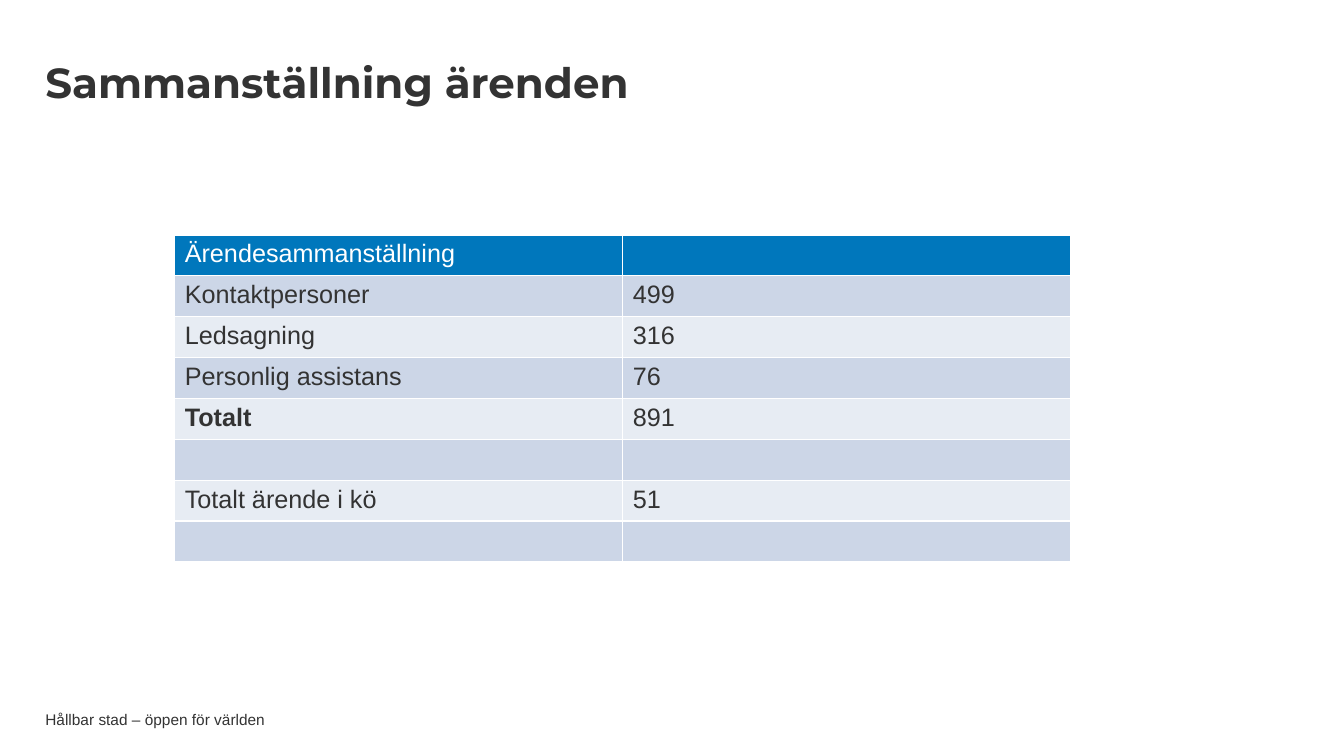
from dataclasses import dataclass

from pptx import Presentation
from pptx.dml.color import RGBColor as Rgb
from pptx.enum.text import MSO_ANCHOR as Anchor, MSO_AUTO_SIZE as AutoSize, PP_ALIGN as Align
from pptx.util import Pt


@dataclass(frozen=True)
class Theme:
    """Colours, fonts and type sizes of the slide."""
    ink: str = "333333"
    white: str = "FFFFFF"
    header: str = "0077BC"
    bands: tuple = ("CCD6E7", "E7ECF3")
    title_font: str = "Montserrat"
    body_font: str = "Arial"
    title_size: int = 30
    table_size: int = 18
    footer_size: int = 11


THEME = Theme()
CASES = [
    ("Ärendesammanställning", ""),
    ("Kontaktpersoner", "499"),
    ("Ledsagning", "316"),
    ("Personlig assistans", "76"),
    ("Totalt", "891"),
    ("", ""),
    ("Totalt ärende i kö", "51"),
    ("", ""),
]


def add_span(para, text, font, size, color, bold=False):
    """Add one formatted run to a paragraph."""
    span = para.add_run()
    span.text = text
    span.font.name = font
    span.font.size = Pt(size)
    span.font.bold = bold
    span.font.color.rgb = Rgb.from_string(color)


def set_frame(frame, inset):
    """Give a text frame its wrapping, anchor and vertical insets."""
    frame.auto_size = AutoSize.NONE
    frame.word_wrap = True
    frame.vertical_anchor = Anchor.MIDDLE
    frame.margin_left = frame.margin_right = 0
    frame.margin_top = frame.margin_bottom = Pt(inset)


def add_title(page, text):
    """Place and fill the title placeholder."""
    title = page.shapes.title
    title.left, title.top, title.width, title.height = Pt(32.4), Pt(31.7), Pt(722), Pt(58.3)
    set_frame(title.text_frame, 3.6)
    para = title.text_frame.paragraphs[0]
    para.alignment = Align.LEFT
    para.line_spacing = 0.9
    add_span(para, text, THEME.title_font, THEME.title_size, THEME.ink, True)


def add_footer(page, text):
    """Add the footer line."""
    box = page.shapes.add_textbox(Pt(32.4), Pt(508.3), Pt(680), Pt(11.5))
    set_frame(box.text_frame, 0)
    add_span(box.text_frame.paragraphs[0], text, THEME.body_font, THEME.footer_size, THEME.ink)


def add_case_table(page, rows):
    """Add the banded table with its header row."""
    frame = page.shapes.add_table(len(rows), 2, Pt(124.8), Pt(167.8), Pt(640), Pt(29.2 * len(rows)))
    for row_index, values in enumerate(rows):
        is_header = row_index == 0
        fill = THEME.header if is_header else THEME.bands[(row_index - 1) % 2]
        color = THEME.white if is_header else THEME.ink
        for column, text in enumerate(values):
            cell = frame.table.cell(row_index, column)
            cell.fill.solid()
            cell.fill.fore_color.rgb = Rgb.from_string(fill)
            para = cell.text_frame.paragraphs[0]
            if text:
                add_span(para, text, THEME.body_font, THEME.table_size, color, text == "Totalt")
            else:
                para.font.size = Pt(THEME.table_size)


def main():
    """Build and save the slide."""
    deck = Presentation()
    deck.slide_width, deck.slide_height = Pt(960), Pt(540)
    page = deck.slides.add_slide(deck.slide_layouts[5])
    add_footer(page, "Hållbar stad – öppen för världen")
    add_title(page, "Sammanställning ärenden")
    add_case_table(page, CASES)
    deck.save("out.pptx")


if __name__ == "__main__":
    main()
